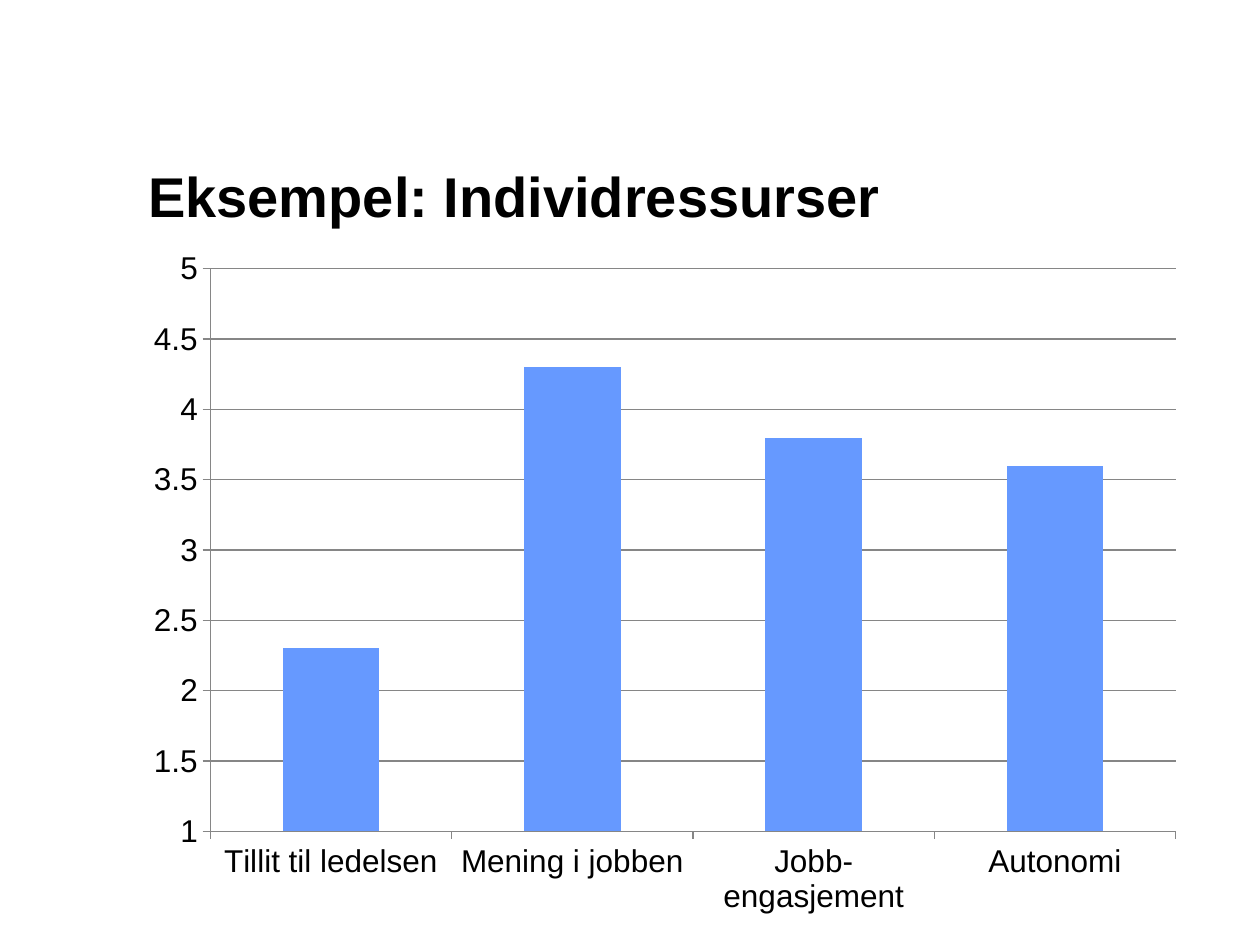
from lxml import etree
from pptx import Presentation
from pptx.chart.data import CategoryChartData
from pptx.dml.color import RGBColor
from pptx.enum.chart import XL_CHART_TYPE, XL_TICK_MARK
from pptx.enum.text import MSO_ANCHOR
from pptx.oxml.ns import qn
from pptx.util import Cm, Pt

COLUMNS = XL_CHART_TYPE.COLUMN_CLUSTERED
OUTSIDE = XL_TICK_MARK.OUTSIDE
NO_TICK = XL_TICK_MARK.NONE
MIDDLE = MSO_ANCHOR.MIDDLE

COLORS = {"text": "000000", "bar": "6699FF", "line": "868686"}
TITLE_FONT = {"name": "Arial", "size": Pt(32), "bold": True}
CHART_FONT = {"name": "Arial", "size": Pt(18), "bold": False}

LEFT, WIDTH = Cm(2.74), Cm(21.39)
RESOURCES = {
    "Tillit til ledelsen": 2.3,
    "Mening i jobben": 4.3,
    "Jobb- engasjement": 3.8,
    "Autonomi": 3.6,
}
# Inner plot area as fractions of the chart
PLOT_AREA = {"x": 0.07, "y": 0.05, "w": 0.91, "h": 0.81}


def rgb(name):
    return RGBColor.from_string(COLORS[name])


def format_font(font, values):
    for key, value in values.items():
        setattr(font, key, value)
    font.color.rgb = rgb("text")


def add_title(page, text):
    box = page.shapes.add_textbox(LEFT, Cm(2.34), WIDTH, Cm(3.18))
    frame = box.text_frame
    frame.word_wrap = True
    frame.vertical_anchor = MIDDLE
    span = frame.paragraphs[0].add_run()
    span.text = text
    format_font(span.font, TITLE_FONT)


def place_plot(chart):
    plot_area = chart.element.find(".//" + qn("c:plotArea"))
    layout = plot_area.find(qn("c:layout"))
    if layout is None:
        layout = etree.Element(qn("c:layout"))
        plot_area.insert(0, layout)
    manual = etree.SubElement(layout, qn("c:manualLayout"))
    settings = {"layoutTarget": "inner", "xMode": "edge", "yMode": "edge", **PLOT_AREA}
    for key, value in settings.items():
        etree.SubElement(manual, qn("c:" + key)).set("val", str(value))


def format_axis(axis):
    axis.major_tick_mark = OUTSIDE
    axis.minor_tick_mark = NO_TICK
    axis.format.line.color.rgb = rgb("line")


def add_column_chart(page, values):
    data = CategoryChartData()
    data.categories = list(values)
    data.add_series("Series 1", list(values.values()))
    chart = page.shapes.add_chart(COLUMNS, LEFT, Cm(4.72), WIDTH, Cm(14), data).chart
    chart.has_legend = False
    chart.has_title = False
    format_font(chart.font, CHART_FONT)
    place_plot(chart)

    # Columns
    plot = chart.plots[0]
    plot.vary_by_categories = False
    plot.gap_width = 150
    fill = plot.series[0].format.fill
    fill.solid()
    fill.fore_color.rgb = rgb("bar")

    # Axes and gridlines
    for axis in (chart.category_axis, chart.value_axis):
        format_axis(axis)
    scale = chart.value_axis
    scale.minimum_scale, scale.maximum_scale, scale.major_unit = 1, 5, 0.5
    scale.has_major_gridlines = True
    scale.major_gridlines.format.line.color.rgb = rgb("line")


def main():
    deck = Presentation()
    deck.slide_width, deck.slide_height = Cm(25.4), Cm(19.05)
    page = deck.slides.add_slide(deck.slide_layouts[6])
    add_title(page, "Eksempel: Individressurser")
    add_column_chart(page, RESOURCES)
    deck.save("out.pptx")


if __name__ == "__main__":
    main()
